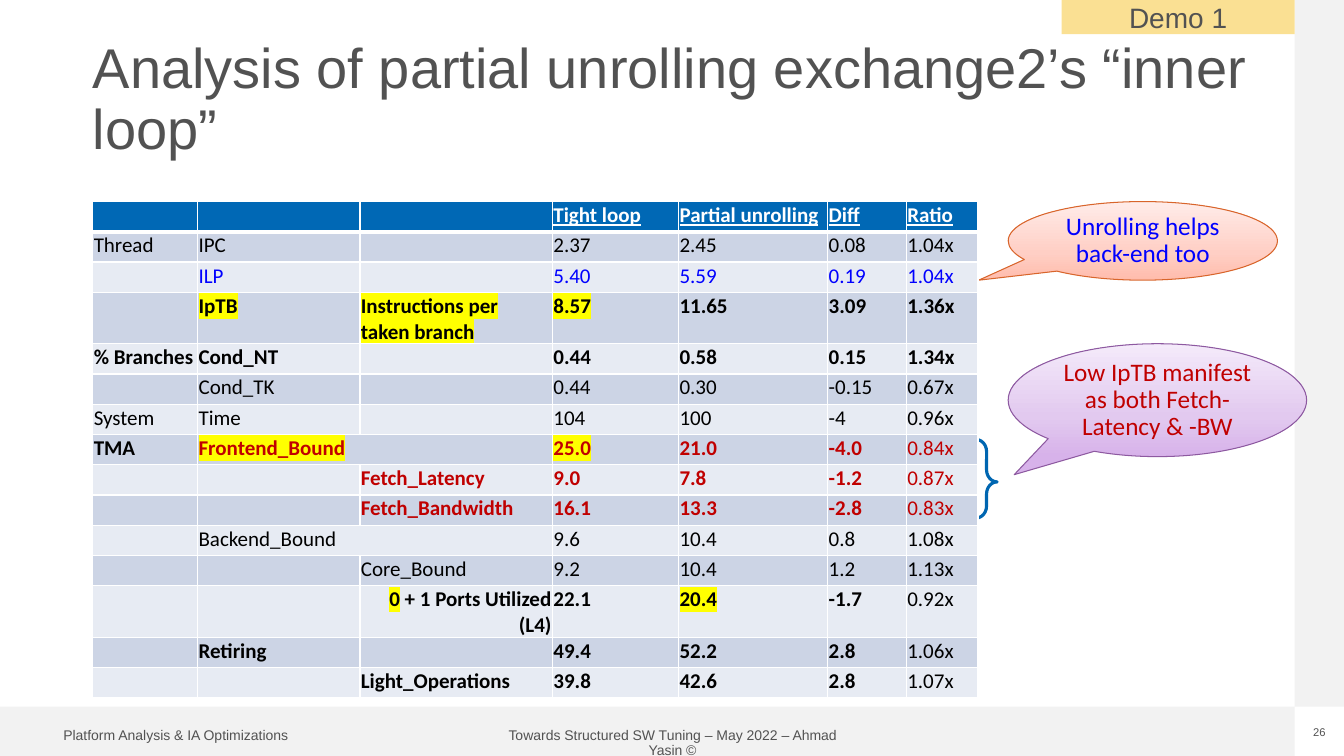
from copy import deepcopy
from lxml.etree import SubElement
from pptx import Presentation
from pptx.dml.color import RGBColor
from pptx.enum.shapes import MSO_SHAPE as SHAPE
from pptx.enum.text import MSO_ANCHOR as ANCHOR, PP_ALIGN as ALIGN
from pptx.oxml.ns import qn
from pptx.util import Inches, Pt

W, H = 13.33, 7.5
EDGE = 0.49    # thickness of the grey bands
LEFT = 0.92    # left edge of title and table

COLORS = {
    "band": "F2F2F2", "grey": "525252", "tag": "FAE093", "head": "0068B5",
    "odd": "CCD4E5", "even": "E7EBF3", "white": "FFFFFF", "black": "000000",
    "blue": "0000FF", "red": "C00000", "yellow": "FFFF00", "brace": "0066B1",
    "orange line": "D8652B", "purple line": "8D59A0",
}
ORANGE = ("FFBCAC", "FFCFC5", "FFECE9")
PURPLE = ("D7B2EA", "E2C9EF", "F4EAFA")

COLUMNS = (1.04, 1.61, 1.91, 1.25, 1.48, 0.78, 0.71)
ROW_H, TALL_ROW_H = 0.3, 0.51
HEADER = ("", "", "", "Tight loop", "Partial unrolling", "Diff", "Ratio")
# Colour, number of leading bold columns, cells; *stars* enclose highlights
ROWS = (
    ("black", 0, ("Thread", "IPC", "", "2.37", "2.45", "0.08", "1.04x")),
    ("blue", 0, ("", "ILP", "", "5.40", "5.59", "0.19", "1.04x")),
    ("black", 7, ("", "*IpTB*", "*Instructions per taken branch*", "*8.57*",
                  "11.65", "3.09", "1.36x")),
    ("black", 7, ("% Branches", "Cond_NT", "", "0.44", "0.58", "0.15", "1.34x")),
    ("black", 0, ("", "Cond_TK", "", "0.44", "0.30", "-0.15", "0.67x")),
    ("black", 0, ("System", "Time", "", "104", "100", "-4", "0.96x")),
    ("red", 6, ("TMA", "*Frontend_Bound*", "", "*25.0*", "21.0", "-4.0", "0.84x")),
    ("red", 6, ("", "", "Fetch_Latency", "9.0", "7.8", "-1.2", "0.87x")),
    ("red", 6, ("", "", "Fetch_Bandwidth", "16.1", "13.3", "-2.8", "0.83x")),
    ("black", 0, ("", "Backend_Bound", "", "9.6", "10.4", "0.8", "1.08x")),
    ("black", 0, ("", "", "Core_Bound", "9.2", "10.4", "1.2", "1.13x")),
    ("black", 6, ("", "", "*0* + 1 Ports Utilized\n(L4)", "22.1", "*20.4*",
                  "-1.7", "0.92x")),
    ("black", 6, ("", "Retiring", "", "49.4", "52.2", "2.8", "1.06x")),
    ("black", 6, ("", "", "Light_Operations", "39.8", "42.6", "2.8", "1.07x")),
)


def rgb(name):
    return RGBColor.from_string(COLORS.get(name, name))


def set_font(p, size, color, name="Arial", bold=False, underline=False):
    f = p.font
    f.size, f.name, f.bold, f.underline = Pt(size), name, bold, underline
    f.color.rgb = rgb(color)


def write(sp, text, size, color, name="Arial", align=ALIGN.LEFT,
          anchor=ANCHOR.TOP, spacing=0.9, inset=None):
    tf = sp.text_frame
    tf.word_wrap, tf.vertical_anchor = True, anchor
    if inset is not None:
        tf.margin_left = tf.margin_right = Inches(inset)
        tf.margin_top = tf.margin_bottom = Inches(inset)
    p = tf.paragraphs[0]
    p.text, p.alignment, p.line_spacing = text, align, spacing
    set_font(p, size, color, name)


def add_text(s, box, *args, **kwargs):
    write(s.shapes.add_textbox(*map(Inches, box)), *args, **kwargs)


def add_shape(s, kind, box, fill=None, line=None, width=0.75):
    sp = s.shapes.add_shape(kind, *map(Inches, box))
    sp.shadow.inherit = False
    if fill:
        sp.fill.solid()
        sp.fill.fore_color.rgb = rgb(fill)
    else:
        sp.fill.background()
    if line:
        sp.line.color.rgb, sp.line.width = rgb(line), Pt(width)
    else:
        sp.line.fill.background()
    return sp


def add_frame(s, box):
    """Grey bands, footer texts and slide number."""
    x, y, w, h = box
    right, bottom = x + w - EDGE, y + h - EDGE
    add_shape(s, SHAPE.RECTANGLE, (x, bottom, w - EDGE, EDGE), "band")
    add_shape(s, SHAPE.RECTANGLE, (right, y, EDGE, h - EDGE), "band")
    top = bottom + 0.17
    add_text(s, (x + 4.78, top, 3.78, 0.25),
             "Towards Structured SW Tuning – May 2022 – Ahmad Yasin ©",
             10, "grey", align=ALIGN.CENTER)
    add_text(s, (x + 0.53, top, 2.53, 0.25),
             "Platform Analysis & IA Optimizations", 10, "grey")
    add_text(s, (right, top + 0.02, EDGE, 0.13), "26", 8, "grey",
             align=ALIGN.CENTER, spacing=1.0, inset=0)


def add_tag(s, box):
    sp = add_shape(s, SHAPE.RECTANGLE, box, "tag")
    write(sp, "Demo 1", 20, "grey", align=ALIGN.CENTER,
          anchor=ANCHOR.MIDDLE, spacing=1.0, inset=0)


def add_callout(s, box, tip, stops, line, text, color):
    sp = add_shape(s, SHAPE.OVAL_CALLOUT, box, line=line)
    sp.adjustments[0], sp.adjustments[1] = tip
    # Three-stop gradient, strongest at the bottom
    sp.fill.gradient()
    sp.fill.gradient_angle = 90
    first = sp._element.spPr.find(".//" + qn("a:gs"))
    first.addnext(deepcopy(first))
    for stop, position, shade in zip(sp.fill.gradient_stops, (0, 0.35, 1), stops):
        stop.position, stop.color.rgb = position, rgb(shade)
    write(sp, text, 18, color, "Calibri", ALIGN.CENTER, ANCHOR.MIDDLE)


def add_brace(s, box):
    sp = add_shape(s, SHAPE.RIGHT_BRACE, box, line="brace", width=2.25)
    sp.adjustments[0], sp.adjustments[1] = 0.57, 0.54


def style_cell(cell, fill, bottom=1):
    cell.margin_left = cell.margin_right = cell.margin_top = Inches(0.01)
    cell.margin_bottom = 0
    tc_pr = cell._tc.get_or_add_tcPr()
    for side, width in zip("LRTB", (1, 1, 1, bottom)):
        ln = SubElement(tc_pr, qn("a:ln" + side), w=str(Pt(width)))
        SubElement(SubElement(ln, qn("a:solidFill")), qn("a:srgbClr"),
                   val=COLORS["white"])
    cell.fill.solid()
    cell.fill.fore_color.rgb = rgb(fill)


def fill_cell(cell, text, color, bold, underline=False):
    tf = cell.text_frame
    lines = text.split("\n")
    for i, line in enumerate(lines):
        p = tf.add_paragraph() if i else tf.paragraphs[0]
        if len(lines) > 1:
            p.alignment = ALIGN.RIGHT
        set_font(p, 15, color, "Calibri", bold, underline)
        for j, part in enumerate(line.split("*")):
            if not part:
                continue
            r = p.add_run()
            r.text = part
            if j % 2:
                mark = SubElement(r._r.get_or_add_rPr(), qn("a:highlight"))
                SubElement(mark, qn("a:srgbClr"), val=COLORS["yellow"])
        if not line:
            SubElement(p._p, qn("a:endParaRPr"), sz="1500")


def add_metrics(s, box):
    """Table of metrics for both loop versions."""
    n = len(ROWS) + 1
    t = s.shapes.add_table(n, len(COLUMNS), *map(Inches, box)).table
    t.first_row = t.horz_banding = False
    for col, width in zip(t.columns, COLUMNS):
        col.width = Inches(width)
    t.rows[0].height = Inches(ROW_H)
    for c, text in enumerate(HEADER):
        style_cell(t.cell(0, c), "head", bottom=3)
        fill_cell(t.cell(0, c), text, "white", True, True)
    for i, (color, bold_cols, cells) in enumerate(ROWS, 1):
        tall = cells[2].startswith("*")
        t.rows[i].height = Inches(TALL_ROW_H if tall else ROW_H)
        for c, text in enumerate(cells):
            style_cell(t.cell(i, c), "odd" if i % 2 else "even")
            fill_cell(t.cell(i, c), text, "black" if c == 0 else color, c < bold_cols)
        if "_Bound" in cells[1]:
            t.cell(i, 1).merge(t.cell(i, 2))


def main():
    prs = Presentation()
    prs.slide_width, prs.slide_height = Inches(W), Inches(H)
    s = prs.slides.add_slide(prs.slide_layouts[6])
    add_frame(s, (0, 0, W, H))
    add_text(s, (LEFT, 0.4, 11.5, 1.45),
             "Analysis of partial unrolling exchange2’s “inner loop”",
             40, "grey", inset=0)
    add_callout(s, (10, 2, 2.67, 0.78), (-0.61, 0.5), ORANGE, "orange line",
                "Unrolling helps back-end too", "blue")
    add_callout(s, (10, 3.41, 2.96, 1.12), (-0.48, 0.66), PURPLE, "purple line",
                "Low IpTB manifest as both Fetch- Latency & -BW", "red")
    add_brace(s, (9.68, 4.36, 0.21, 0.78))
    add_metrics(s, (LEFT, 2, sum(COLUMNS), 4.93))
    add_tag(s, (10.53, 0, 2.31, 0.34))
    prs.save("out.pptx")


if __name__ == "__main__":
    main()
